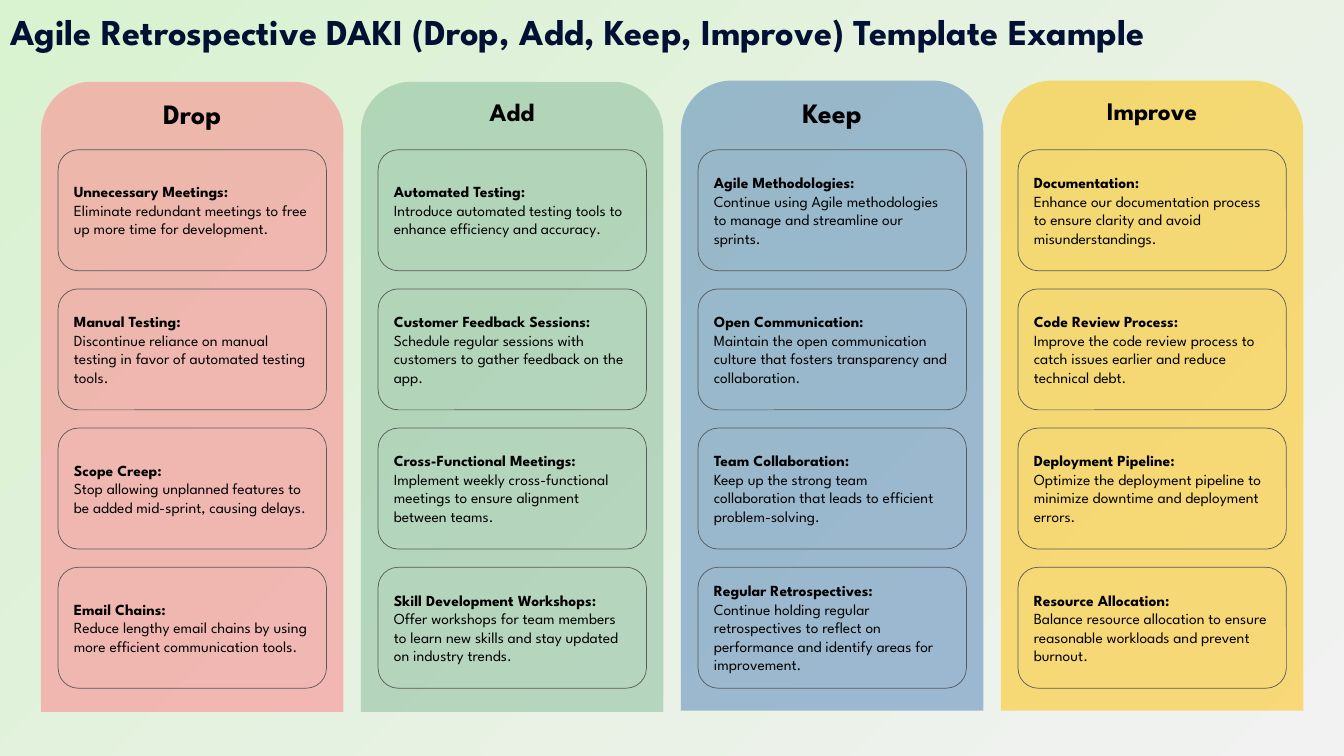
"""Build the DAKI (Drop, Add, Keep, Improve) agile retrospective slide."""
from dataclasses import dataclass

import lxml.etree
import pptx
import pptx.dml.color
import pptx.enum.shapes
import pptx.enum.text
import pptx.oxml.ns
import pptx.shapes.autoshape
import pptx.slide
import pptx.text.text
import pptx.util


@dataclass(frozen=True)
class Theme:
    font: str = "League Spartan"
    title_color: str = "011033"
    text_color: str = "000000"
    outline: str = "595959"
    background: tuple[str, str] = ("F2F2F2", "D9F2D0")
    background_angle: int = 135
    column_opacity: int = 50
    title_size: int = 26
    card_size: int = 11


@dataclass(frozen=True)
class Card:
    heading: str
    detail: str


@dataclass(frozen=True)
class Column:
    heading: str
    heading_size: int
    color: str
    top: float
    cards: tuple[Card, ...]


THEME = Theme()
SLIDE_WIDTH, SLIDE_HEIGHT = 960, 540
COLUMN_LEFT, COLUMN_PITCH, COLUMN_WIDTH, COLUMN_HEIGHT = 29.3, 228.55, 216, 450
CARD_INSET, CARD_TOP, CARD_PITCH = 12.2, 107, 99.4
CARD_WIDTH, CARD_HEIGHT = 191.7, 86.4

COLUMNS = (
    Column("Drop", 20, "FF7D86", 58.4, (
        Card("Unnecessary Meetings:",
             "Eliminate redundant meetings to free up more time for development."),
        Card("Manual Testing:",
             "Discontinue reliance on manual testing in favor of automated testing tools."),
        Card("Scope Creep:",
             "Stop allowing unplanned features to be added mid-sprint, causing delays."),
        Card("Email Chains:",
             "Reduce lengthy email chains by using more efficient communication tools."),
    )),
    Column("Add", 18, "84BA99", 58.4, (
        Card("Automated Testing:",
             "Introduce automated testing tools to enhance efficiency and accuracy."),
        Card("Customer Feedback Sessions:",
             "Schedule regular sessions with customers to gather feedback on the app."),
        Card("Cross-Functional Meetings:",
             "Implement weekly cross-functional meetings to ensure alignment between teams."),
        Card("Skill Development Workshops:",
             "Offer workshops for team members to learn new skills "
             "and stay updated on industry trends."),
    )),
    Column("Keep", 20, "4D7FB7", 57.6, (
        Card("Agile Methodologies:",
             "Continue using Agile methodologies to manage and streamline our sprints."),
        Card("Open Communication:",
             "Maintain the open communication culture that fosters "
             "transparency and collaboration."),
        Card("Team Collaboration:",
             "Keep up the strong team collaboration that leads to efficient problem-solving."),
        Card("Regular Retrospectives:",
             "Continue holding regular retrospectives to reflect on performance "
             "and identify areas for improvement."),
    )),
    Column("Improve", 18, "FFC000", 57.6, (
        Card("Documentation:",
             "Enhance our documentation process to ensure clarity and avoid misunderstandings."),
        Card("Code Review Process:",
             "Improve the code review process to catch issues earlier and reduce technical debt."),
        Card("Deployment Pipeline:",
             "Optimize the deployment pipeline to minimize downtime and deployment errors."),
        Card("Resource Allocation:",
             "Balance resource allocation to ensure reasonable workloads and prevent burnout."),
    )),
)


def rgb(color: str) -> pptx.dml.color.RGBColor:
    return pptx.dml.color.RGBColor.from_string(color)


def write(paragraph: pptx.text.text._Paragraph, text: str, size: float, bold: bool,
          color: str = THEME.text_color,
          alignment: pptx.enum.text.PP_ALIGN = pptx.enum.text.PP_ALIGN.LEFT) -> None:
    paragraph.text = text
    paragraph.alignment = alignment
    for run in paragraph.runs:
        run.font.name = THEME.font
        run.font.size = pptx.util.Pt(size)
        run.font.bold = bold
        run.font.color.rgb = rgb(color)


def add_box(slide: pptx.slide.Slide, kind: pptx.enum.shapes.MSO_SHAPE, left: float,
            top: float, width: float, height: float) -> pptx.shapes.autoshape.Shape:
    shape = slide.shapes.add_shape(
        kind, *(pptx.util.Pt(length) for length in (left, top, width, height)))
    shape.shadow.inherit = False
    shape.text_frame.word_wrap = True
    return shape


def paint_background(slide: pptx.slide.Slide) -> None:
    fill = slide.background.fill
    fill.gradient()
    fill.gradient_angle = THEME.background_angle
    for position, (stop, color) in enumerate(zip(fill.gradient_stops, THEME.background)):
        stop.position = position
        stop.color.rgb = rgb(color)


def place_title(slide: pptx.slide.Slide) -> None:
    title = slide.shapes.title
    title.left, title.top = pptx.util.Pt(0), pptx.util.Pt(2.9)
    title.width, title.height = pptx.util.Pt(SLIDE_WIDTH), pptx.util.Pt(38.9)
    frame = title.text_frame
    frame.word_wrap = True
    frame.auto_size = pptx.enum.text.MSO_AUTO_SIZE.SHAPE_TO_FIT_TEXT
    frame.vertical_anchor = pptx.enum.text.MSO_ANCHOR.TOP
    write(frame.paragraphs[0],
          "Agile Retrospective DAKI (Drop, Add, Keep, Improve) Template Example",
          THEME.title_size, True, THEME.title_color)


def draw_card(slide: pptx.slide.Slide, card: Card, left: float, top: float) -> None:
    shape = add_box(slide, pptx.enum.shapes.MSO_SHAPE.ROUNDED_RECTANGLE,
                    left, top, CARD_WIDTH, CARD_HEIGHT)
    shape.fill.background()
    shape.line.color.rgb = rgb(THEME.outline)
    shape.line.width = pptx.util.Pt(0.5)
    frame = shape.text_frame
    frame.vertical_anchor = pptx.enum.text.MSO_ANCHOR.MIDDLE
    write(frame.paragraphs[0], card.heading, THEME.card_size, True)
    write(frame.add_paragraph(), card.detail, THEME.card_size, False)


def draw_column(slide: pptx.slide.Slide, column: Column, left: float) -> None:
    shape = add_box(slide, pptx.enum.shapes.MSO_SHAPE.ROUND_2_SAME_RECTANGLE,
                    left, column.top, COLUMN_WIDTH, COLUMN_HEIGHT)
    shape.fill.solid()
    shape.fill.fore_color.rgb = rgb(column.color)
    color_element = shape.fill._xPr.find(".//" + pptx.oxml.ns.qn("a:srgbClr"))
    alpha = lxml.etree.SubElement(color_element, pptx.oxml.ns.qn("a:alpha"))
    alpha.set("val", str(THEME.column_opacity * 1000))
    shape.line.fill.background()
    frame = shape.text_frame
    frame.margin_top = pptx.util.Pt(0)
    frame.vertical_anchor = pptx.enum.text.MSO_ANCHOR.TOP
    write(frame.paragraphs[0], column.heading, column.heading_size, True,
          alignment=pptx.enum.text.PP_ALIGN.CENTER)
    for row, card in enumerate(column.cards):
        draw_card(slide, card, left + CARD_INSET, CARD_TOP + row * CARD_PITCH)


def main() -> None:
    presentation = pptx.Presentation()
    presentation.slide_width = pptx.util.Pt(SLIDE_WIDTH)
    presentation.slide_height = pptx.util.Pt(SLIDE_HEIGHT)
    slide = presentation.slides.add_slide(presentation.slide_layouts.get_by_name("Title Only"))
    paint_background(slide)
    place_title(slide)
    for index, column in enumerate(COLUMNS):
        draw_column(slide, column, COLUMN_LEFT + index * COLUMN_PITCH)
    presentation.save("out.pptx")


if __name__ == "__main__":
    main()
